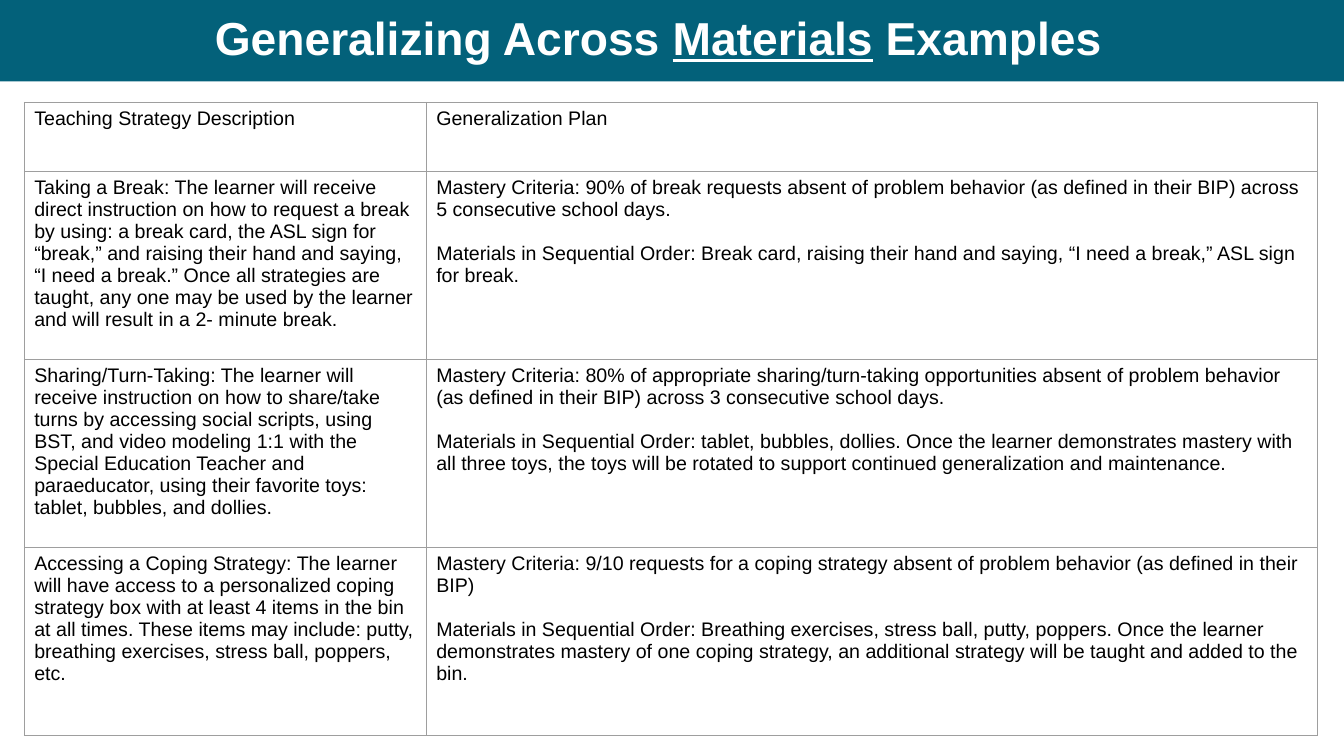
from lxml.etree import SubElement
from pptx import Presentation
from pptx.dml.color import RGBColor
from pptx.enum.shapes import MSO_SHAPE
from pptx.enum.text import MSO_ANCHOR, PP_ALIGN
from pptx.oxml.ns import qn
from pptx.util import Cm, Pt

TEAL = RGBColor(0x03, 0x61, 0x7A)
WHITE = RGBColor(0xFF, 0xFF, 0xFF)
BLACK = RGBColor(0x00, 0x00, 0x00)
GREY = RGBColor(0x9E, 0x9E, 0x9E)
FONT = "Arial"
BAR_HEIGHT = Cm(2.05)
COLUMN_WIDTHS = [Cm(10.13), Cm(22.45)]
ROW_HEIGHTS = [Cm(1.74), Cm(4.74), Cm(4.74), Cm(4.74)]

ROWS = [
    (["Teaching Strategy Description"], ["Generalization Plan"]),
    (
        ["Taking a Break: The learner will receive direct instruction on how to request a break "
         "by using: a break card, the ASL sign for “break,” and raising their hand and saying, "
         "“I need a break.” Once all strategies are taught, any one may be used by the learner "
         "and will result in a 2- minute break."],
        ["Mastery Criteria: 90% of break requests absent of problem behavior (as defined in "
         "their BIP) across 5 consecutive school days.",
         "Materials in Sequential Order: Break card, raising their hand and saying, "
         "“I need a break,” ASL sign for break."],
    ),
    (
        ["Sharing/Turn-Taking: The learner will receive instruction on how to share/take turns "
         "by accessing social scripts, using BST, and video modeling 1:1 with the Special "
         "Education Teacher and paraeducator, using their favorite toys: tablet, bubbles, "
         "and dollies."],
        ["Mastery Criteria: 80% of appropriate sharing/turn-taking opportunities absent of "
         "problem behavior (as defined in their BIP) across 3 consecutive school days.",
         "Materials in Sequential Order: tablet, bubbles, dollies. Once the learner demonstrates "
         "mastery with all three toys, the toys will be rotated to support continued "
         "generalization and maintenance."],
    ),
    (
        ["Accessing a Coping Strategy: The learner will have access to a personalized coping "
         "strategy box with at least 4 items in the bin at all times. These items may include: "
         "putty, breathing exercises, stress ball, poppers, etc."],
        ["Mastery Criteria: 9/10 requests for a coping strategy absent of problem behavior "
         "(as defined in their BIP)",
         "Materials in Sequential Order: Breathing exercises, stress ball, putty, poppers. Once "
         "the learner demonstrates mastery of one coping strategy, an additional strategy will "
         "be taught and added to the bin."],
    ),
]


def style_font(font, size, color):
    font.name = FONT
    font.size = Pt(size)
    font.color.rgb = color


def add_borders(cell):
    tcPr = cell._tc.get_or_add_tcPr()
    for side in ("a:lnL", "a:lnR", "a:lnT", "a:lnB"):
        ln = SubElement(tcPr, qn(side), w=str(Pt(0.75)))
        fill = SubElement(ln, qn("a:solidFill"))
        SubElement(fill, qn("a:srgbClr"), val=str(GREY))


prs = Presentation()
prs.slide_width = Cm(33.87)
prs.slide_height = Cm(19.05)
s = prs.slides.add_slide(prs.slide_layouts[5])

title = s.shapes.title
title.left, title.top, title.width, title.height = Cm(0.94), 0, Cm(31.29), BAR_HEIGHT
tf = title.text_frame
tf.vertical_anchor = MSO_ANCHOR.MIDDLE
p = tf.paragraphs[0]
p.alignment = PP_ALIGN.CENTER
p.line_spacing = 0.9
style_font(p.font, 33, WHITE)
p.font.bold = True
for text in ("Generalizing Across ", "Materials", " Examples"):
    r = p.add_run()
    r.text = text
    r.font.underline = text == "Materials"

bar = s.shapes.add_shape(MSO_SHAPE.RECTANGLE, 0, 0, prs.slide_width, BAR_HEIGHT)
bar.shadow.inherit = False
bar.fill.solid()
bar.fill.fore_color.rgb = TEAL
bar.line.fill.background()
title.element.addprevious(bar.element)

table = s.shapes.add_table(len(ROWS), len(COLUMN_WIDTHS), Cm(0.61), Cm(2.58),
                           sum(COLUMN_WIDTHS), sum(ROW_HEIGHTS)).table
table.first_row = False
table.horz_banding = False
for column, width in zip(table.columns, COLUMN_WIDTHS):
    column.width = width
for row, height, texts in zip(table.rows, ROW_HEIGHTS, ROWS):
    row.height = height
    for cell, paragraphs in zip(row.cells, texts):
        add_borders(cell)
        cell.fill.background()
        tf = cell.text_frame
        tf.text = "\n".join(paragraphs)
        for i, p in enumerate(tf.paragraphs):
            style_font(p.font, 14, BLACK)
            p.space_before = Pt(16 if i else 0)

prs.save("out.pptx")
